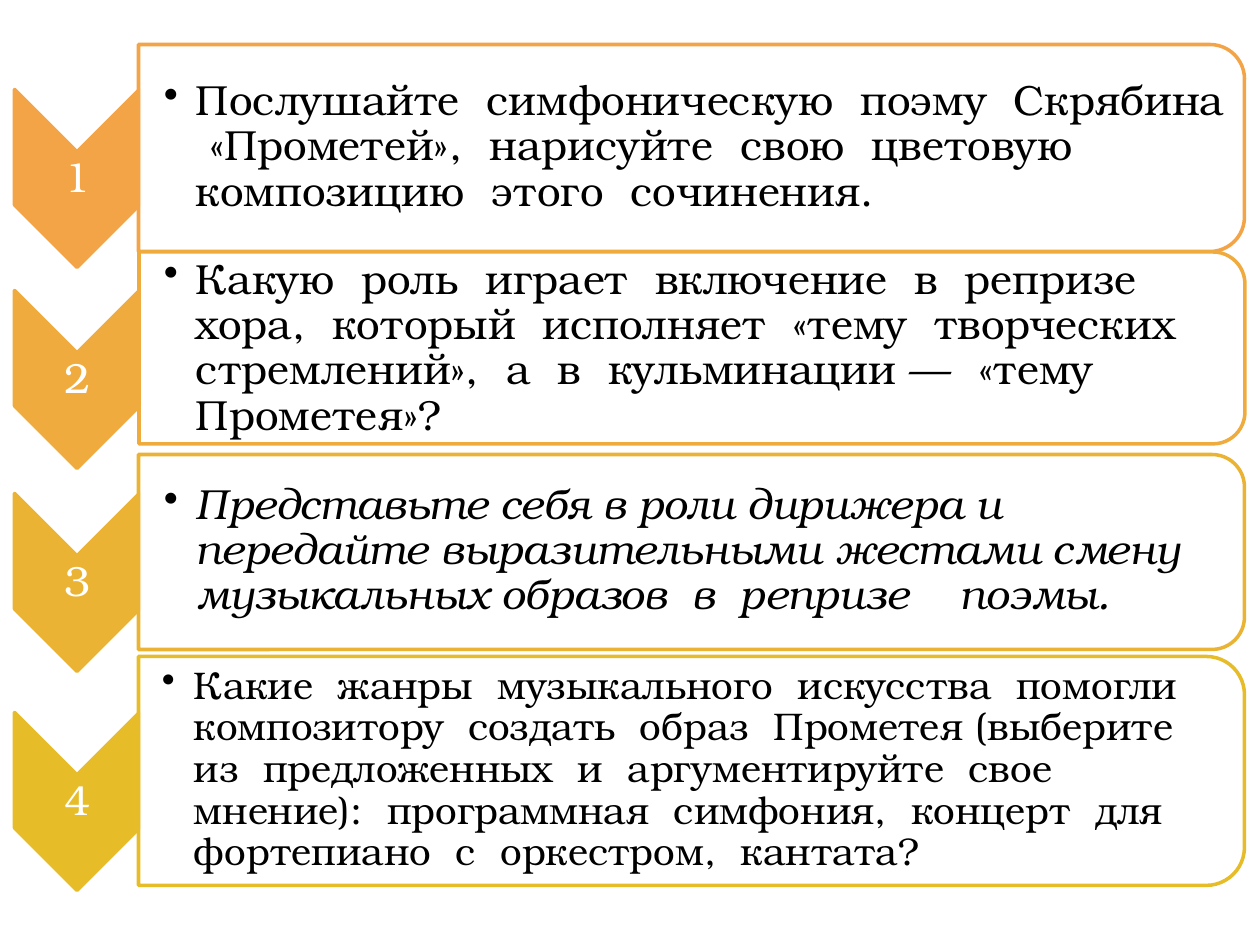
from dataclasses import dataclass

from lxml.etree import SubElement
from pptx import Presentation
from pptx.dml.color import RGBColor
from pptx.enum.shapes import MSO_SHAPE as Preset
from pptx.enum.text import MSO_ANCHOR as Anchor, PP_ALIGN as Align
from pptx.oxml.ns import qn
from pptx.util import Emu, Pt

PX = 914400 // 126


@dataclass(frozen=True)
class Theme:
    font: str = "TeX Gyre Bonum"
    white: str = "FFFFFF"
    black: str = "000000"
    steps: tuple = ("F3A447", "EFAB3D", "EBB333", "E7BC29")
    large: int = 24
    small: int = 22
    border: int = 2
    line_spacing: float = 0.9
    panel_alpha: int = 90000


class StepSlide:
    def __init__(self, slide, theme):
        self.slide = slide
        self.theme = theme

    def turned_shape(self, preset, left, top, width, height, fill, line):
        shift = (width - height) // 2
        box = (left + shift, top - shift, height, width)
        shape = self.slide.shapes.add_shape(preset, *(Emu(v * PX) for v in box))
        shape.rotation = 90
        shape.shadow.inherit = False
        shape.fill.solid()
        shape.fill.fore_color.rgb = RGBColor.from_string(fill)
        shape.line.color.rgb = RGBColor.from_string(line)
        shape.line.width = Pt(self.theme.border)
        return shape

    def chevron(self, left, top, width, height, color):
        self.turned_shape(Preset.CHEVRON, left, top, width, height, color, color)

    def panel(self, left, top, width, height, color):
        shape = self.turned_shape(Preset.ROUND_2_SAME_RECTANGLE, left, top, width, height,
                                  self.theme.white, color)
        fill_color = shape._element.spPr.find(qn("a:solidFill"))[0]
        SubElement(fill_color, qn("a:alpha"), val=str(self.theme.panel_alpha))

    def text(self, left, top, width, height, words, size, color,
             inset=2, align=Align.LEFT, italic=False, hanging=0):
        box = (left, top, width, height)
        frame = self.slide.shapes.add_textbox(*(Emu(v * PX) for v in box)).text_frame
        frame.word_wrap = True
        frame.vertical_anchor = Anchor.MIDDLE
        frame.margin_left = Emu(inset * PX)
        frame.margin_top = frame.margin_right = frame.margin_bottom = Emu(2 * PX)
        paragraph = frame.paragraphs[0]
        paragraph.text = words
        paragraph.alignment = align
        paragraph.line_spacing = self.theme.line_spacing
        if hanging:
            properties = paragraph._p.get_or_add_pPr()
            properties.set("marL", str(hanging * PX))
            properties.set("indent", str(-hanging * PX))
            SubElement(properties, qn("a:buChar"), char="•")
        font = paragraph.font
        font.name = self.theme.font
        font.size = Pt(size)
        font.italic = italic
        font.color.rgb = RGBColor.from_string(color)

    def step(self, number, color, top, height, words, size, inset, italic):
        theme = self.theme
        middle = top + height // 2
        chevron_middle = middle + 31
        text_height = round(height * 0.9)
        self.chevron(15, chevron_middle - 89, 125, 178, color)
        self.text(15, chevron_middle - 26, 125, 53, str(number), theme.large,
                  theme.white, align=Align.CENTER)
        self.panel(139, top, 1106, height, color)
        self.text(140, middle - text_height // 2, 1096, text_height, words, size,
                  theme.black, inset=inset, italic=italic, hanging=32)


def main():
    presentation = Presentation()
    presentation.slide_width = Emu(1260 * PX)
    presentation.slide_height = Emu(945 * PX)
    theme = Theme()
    slide = presentation.slides.add_slide(presentation.slide_layouts[6])
    page = StepSlide(slide, theme)
    tasks = [
        (44, 207, "Послушайте  симфоническую  поэму  Скрябина  «Прометей»,  нарисуйте  "
         "свою  цветовую  композицию  этого  сочинения.", theme.large, 24, False),
        (252, 192, "Какую  роль  играет  включение  в  репризе  хора,  который  исполняет  "
         "«тему  творческих стремлений»,  а  в  кульминации —  «тему  Прометея»?",
         theme.large, 24, False),
        (454, 195, "Представьте себя в роли дирижера и передайте выразительными жестами "
         "смену музыкальных образов  в  репризе    поэмы.", theme.large, 24, True),
        (656, 229, "Какие  жанры  музыкального  искусства  помогли  композитору  создать  "
         "образ  Прометея (выберите  из  предложенных  и  аргументируйте  свое  мнение):  "
         "программная  симфония,  концерт  для фортепиано  с  оркестром,  кантата?",
         theme.small, 22, False),
    ]
    for number, (color, task) in enumerate(zip(theme.steps, tasks), 1):
        page.step(number, color, *task)
    presentation.save("out.pptx")


if __name__ == "__main__":
    main()
